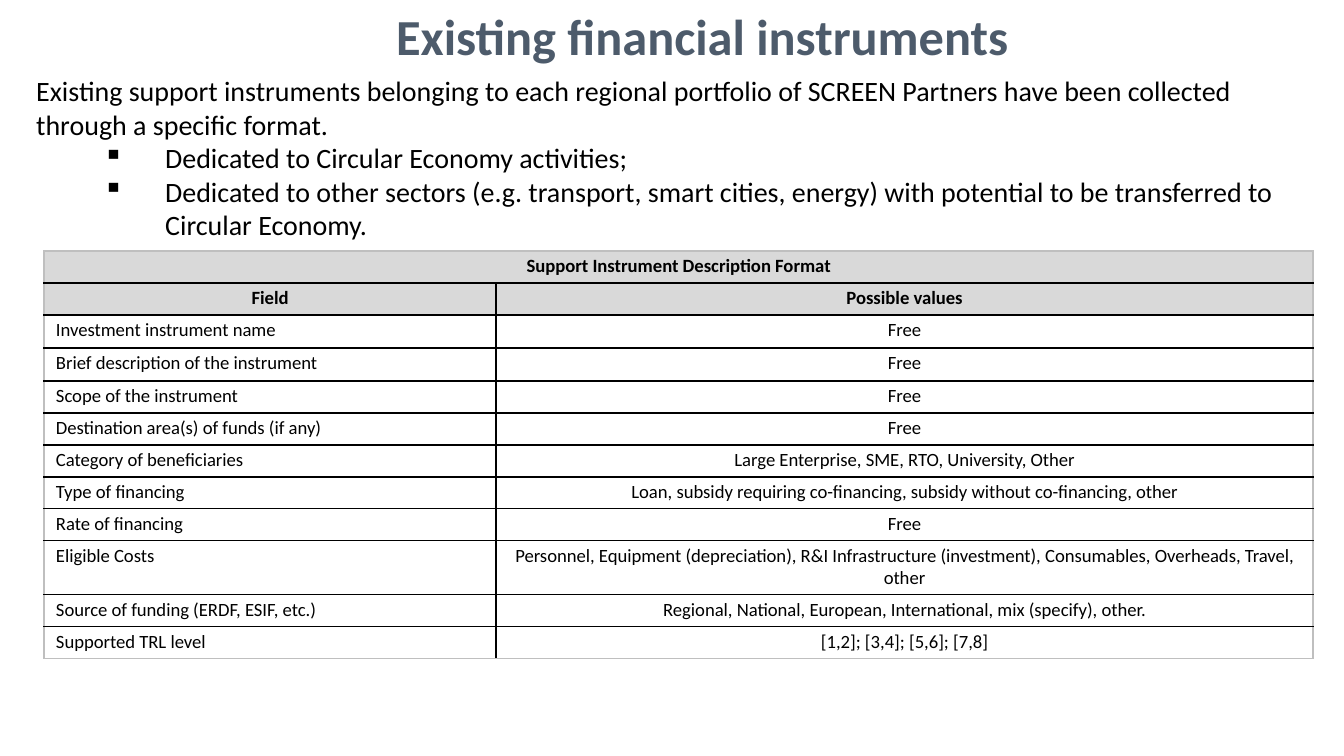
"""Build the slide on existing financial instruments and their description format."""
from lxml import etree
from pptx import Presentation
from pptx.dml.color import RGBColor
from pptx.enum.text import MSO_AUTO_SIZE, PP_ALIGN
from pptx.oxml.ns import qn
from pptx.util import Emu, Pt

LEFT, CENTER = PP_ALIGN.LEFT, PP_ALIGN.CENTER
FIT_SHAPE = MSO_AUTO_SIZE.SHAPE_TO_FIT_TEXT
EMU_PER_PX = 914400 / 134.4

FONT = "Calibri"
BLACK = RGBColor(0x00, 0x00, 0x00)
SLATE = RGBColor(0x4D, 0x5B, 0x6B)
HEADER_GRAY = RGBColor(0xD9, 0xD9, 0xD9)
EDGE_GRAY = RGBColor(0xBF, 0xBF, 0xBF)

TITLE = "Existing financial instruments "
INTRO = (
    "Existing support instruments belonging to each regional portfolio of SCREEN "
    "Partners have been collected through a specific format."
)
BULLETS = [
    "Dedicated to Circular Economy activities;",
    "Dedicated to other sectors (e.g. transport, smart cities, energy) with potential "
    "to be transferred to Circular Economy.",
]
HEADER_ROWS = 2
FORMAT_ROWS = [
    ("Support Instrument Description Format", ""),
    ("Field", "Possible values"),
    ("Investment instrument name", "Free"),
    ("Brief description of the instrument", "Free"),
    ("Scope of the instrument", "Free"),
    ("Destination area(s) of funds (if any)", "Free"),
    ("Category of beneficiaries", "Large Enterprise, SME, RTO, University, Other"),
    ("Type of financing",
     "Loan, subsidy requiring co-financing, subsidy without co-financing, other"),
    ("Rate of financing", "Free"),
    ("Eligible Costs",
     "Personnel, Equipment (depreciation), R&I Infrastructure (investment), "
     "Consumables, Overheads, Travel, other"),
    ("Source of funding (ERDF, ESIF, etc.)",
     "Regional, National, European, International, mix (specify), other."),
    ("Supported TRL level", "[1,2]; [3,4]; [5,6]; [7,8]"),
]
COLUMN_WIDTHS = [452, 817]
ROW_HEIGHT = 32
TALL_ROWS = {2: 33, 3: 33, 9: 54}


def px(length):
    """Turn a length in px into EMU."""
    return Emu(round(length * EMU_PER_PX))


def style_para(para, size, color=BLACK, bold=False, align=LEFT):
    """Set the alignment of a paragraph and the font of its runs."""
    para.alignment = align
    for span in para.runs:
        span.font.name = FONT
        span.font.size = Pt(size)
        span.font.bold = bold
        span.font.color.rgb = color


def add_text_box(page, left, top, width, height, lines):
    """Add a wrapping text box with one paragraph per line."""
    box = page.shapes.add_textbox(px(left), px(top), px(width), px(height))
    frame = box.text_frame
    frame.word_wrap = True
    frame.auto_size = FIT_SHAPE
    frame.text = "\n".join(lines)
    return frame


def add_bullet(para):
    """Give a paragraph a square bullet with a hanging indent."""
    properties = para._p.get_or_add_pPr()
    properties.set("marL", str(px(129)))
    properties.set("indent", str(px(-62)))
    etree.SubElement(properties, qn("a:buChar"), char="▪")


def add_border(cell, side, color):
    """Draw a one-point line on one side of a table cell."""
    properties = cell._tc.get_or_add_tcPr()
    line = etree.SubElement(properties, qn(f"a:ln{side}"), w=str(Pt(1)))
    fill = etree.SubElement(line, qn("a:solidFill"))
    etree.SubElement(fill, qn("a:srgbClr"), val=str(color))


def style_cell(cell, row, column):
    """Set the margins, borders, fill and font of a table cell."""
    cell.margin_left = cell.margin_right = px(12)
    cell.margin_top = cell.margin_bottom = px(4)
    outer_sides = {
        "L": column == 0,
        "R": column + cell.span_width == len(COLUMN_WIDTHS),
        "T": row == 0,
        "B": row == len(FORMAT_ROWS) - 1,
    }
    for side, is_outer in outer_sides.items():
        add_border(cell, side, EDGE_GRAY if is_outer else BLACK)
    is_header = row < HEADER_ROWS
    if is_header:
        cell.fill.solid()
        cell.fill.fore_color.rgb = HEADER_GRAY
    else:
        cell.fill.background()
    align = CENTER if is_header or column else LEFT
    style_para(cell.text_frame.paragraphs[0], 10, bold=is_header, align=align)


def add_format_table(page, left, top):
    """Add the table that describes the support instrument format."""
    heights = [TALL_ROWS.get(row, ROW_HEIGHT) for row in range(len(FORMAT_ROWS))]
    table = page.shapes.add_table(
        len(heights), len(COLUMN_WIDTHS), px(left), px(top),
        px(sum(COLUMN_WIDTHS)), px(sum(heights)),
    ).table
    table.first_row = table.horz_banding = False
    for column, width in zip(table.columns, COLUMN_WIDTHS):
        column.width = px(width)
    for row, height in zip(table.rows, heights):
        row.height = px(height)
    table.cell(0, 0).merge(table.cell(0, 1))
    for row, values in enumerate(FORMAT_ROWS):
        for column, value in enumerate(values):
            cell = table.cell(row, column)
            cell.text_frame.text = value
            style_cell(cell, row, column)


def main():
    """Build the deck and save it."""
    deck = Presentation()
    deck.slide_width, deck.slide_height = px(1344), px(756)
    page = deck.slides.add_slide(deck.slide_layouts[6])

    intro = add_text_box(page, 23, 67, 1277, 219, [INTRO, *BULLETS])
    for para in intro.paragraphs[1:]:
        para.level = 1
        add_bullet(para)
    for para in intro.paragraphs:
        style_para(para, 15)

    add_format_table(page, 44, 251)

    title = add_text_box(page, 91, -1, 1234, 73, [TITLE])
    style_para(title.paragraphs[0], 27, SLATE, bold=True, align=CENTER)

    deck.save("out.pptx")


if __name__ == "__main__":
    main()
